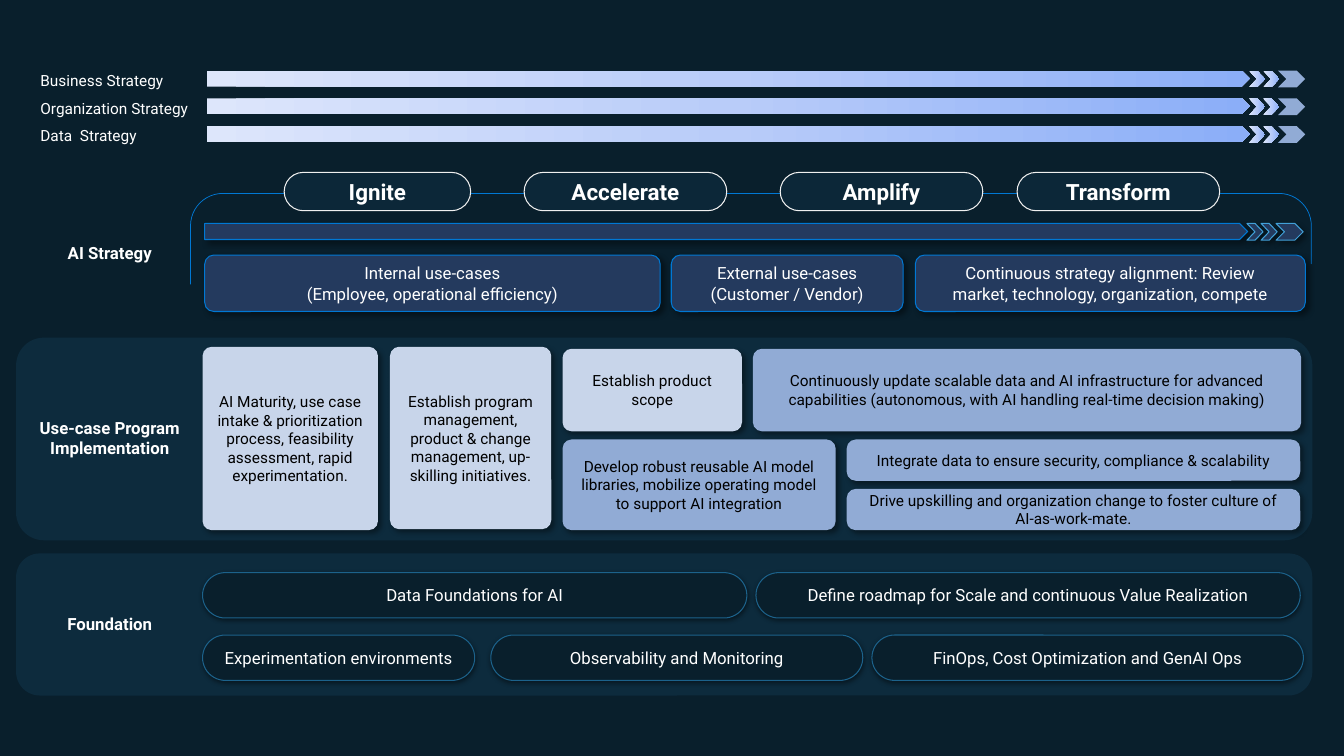
"""Build the AI journey roadmap slide."""
import copy

import pptx
import pptx.dml.color
import pptx.enum.shapes
import pptx.enum.text
import pptx.oxml
import pptx.oxml.ns
import pptx.util

Pt = pptx.util.Pt
RGB = pptx.dml.color.RGBColor
SHAPE = pptx.enum.shapes.MSO_SHAPE
ALIGN = pptx.enum.text.PP_ALIGN
qn = pptx.oxml.ns.qn

NIGHT = RGB(0x09, 0x1F, 0x2C)
PANEL = RGB(0x0D, 0x2B, 0x3D)
STAGE = RGB(0x0C, 0x27, 0x38)
NAVY = RGB(0x24, 0x3A, 0x5E)
AZURE = RGB(0x00, 0x78, 0xD4)
SKY = RGB(0x41, 0xA0, 0xD8)
TEAL = RGB(0x1C, 0x62, 0x8B)
PALE = RGB(0xC8, 0xD5, 0xEA)
STEEL = RGB(0x91, 0xAB, 0xD5)
MIST = RGB(0xF0, 0xF0, 0xF0)
WHITE = RGB(0xFF, 0xFF, 0xFF)
BLACK = RGB(0x00, 0x00, 0x00)
FADE = (RGB(0xDD, 0xE6, 0xFB), RGB(0xB9, 0xCC, 0xF9), RGB(0x8B, 0xAE, 0xF8))

CARD_SHADOW = (40, 4, 3, 45)
PILL_SHADOW = (45, 3.5, 1.1, 90)
CARD_RADIUS = 6.5
FLOW_WIDTH = 745

STRATEGIES = ("Business Strategy", "Organization Strategy", "Data  Strategy")
STAGES = (
    (203, 133.2, "Ignite"),
    (374.4, 144.7, "Accelerate"),
    (557.3, 144.7, "Amplify"),
    (726.5, 144.7, "Transform"),
)
USE_CASES = (
    (146.2, 325.4, "Internal use-cases\n(Employee, operational efficiency)"),
    (479.5, 165.6, "External use-cases\n(Customer / Vendor)"),
    (653.8, 278.6, "Continuous strategy alignment: Review market, technology, organization, compete"),
)
PROGRAM = (
    (144.7, 247.7, 125.3, 131, PALE,
     "AI Maturity, use case intake & prioritization process, feasibility assessment, "
     "rapid experimentation."),
    (278.6, 247.7, 115.2, 130.3, PALE,
     "Establish program management, product & change management, up-skilling initiatives."),
    (401.8, 249.1, 128.2, 59, PALE, "Establish product scope"),
    (401.8, 313.9, 195.1, 64.8, STEEL,
     "Develop robust reusable AI model libraries, mobilize operating model to support "
     "AI integration"),
    (537.8, 249.1, 391.7, 59, STEEL,
     "Continuously update scalable data and AI infrastructure for advanced capabilities "
     "(autonomous, with AI handling real-time decision making)"),
    (604.8, 313.9, 324, 29.5, STEEL,
     "Integrate data to ensure security, compliance & scalability"),
    (604.8, 349.2, 324, 29.5, STEEL,
     "Drive upskilling and organization change to foster culture of AI-as-work-mate."),
)
FOUNDATION = (
    (144.7, 409, 388.8, "Data Foundations for AI"),
    (540, 409, 388.8, "Define roadmap for Scale and continuous Value Realization"),
    (144.7, 453.6, 194.4, "Experimentation environments"),
    (350.6, 453.6, 265.7, "Observability and Monitoring"),
    (622.8, 453.6, 308.2, "FinOps, Cost Optimization and GenAI Ops"),
)
SECTIONS = (
    (158.4, 43.9, "AI Strategy"),
    (290.9, 43.9, "Use-case Program Implementation"),
    (431.3, 28.8, "Foundation"),
)


def write(sp, text, size=12, color=WHITE, bold=False, align=ALIGN.CENTER, inset=0):
    """Fill a shape with vertically centred text, one paragraph per line."""
    tf = sp.text_frame
    tf.word_wrap = True
    tf.vertical_anchor = pptx.enum.text.MSO_ANCHOR.MIDDLE
    tf.margin_left = tf.margin_right = Pt(inset)
    tf.margin_top = tf.margin_bottom = 0
    for i, line in enumerate(text.split("\n")):
        p = tf.add_paragraph() if i else tf.paragraphs[0]
        p.alignment = align
        r = p.add_run()
        r.text = line
        r.font.name = "Roboto"
        r.font.size = Pt(size)
        r.font.bold = bold
        r.font.color.rgb = color


def cast_shadow(sp, alpha, blur, distance, angle):
    """Give a shape a soft black outer shadow."""
    effects = sp._element.spPr.find(qn("a:effectLst"))
    effects.append(pptx.oxml.parse_xml(
        f'<a:outerShdw {pptx.oxml.ns.nsdecls("a")} blurRad="{Pt(blur)}" dist="{Pt(distance)}" '
        f'dir="{angle * 60000}" algn="ctr" rotWithShape="0"><a:srgbClr val="000000">'
        f'<a:alpha val="{alpha * 1000}"/></a:srgbClr></a:outerShdw>'))


def fade(sp):
    """Fill a shape with the left-to-right strategy gradient."""
    sp.fill.gradient()
    sp.fill.gradient_angle = 0
    stops = sp._element.spPr.find(".//" + qn("a:gsLst"))
    stops.insert(1, copy.deepcopy(stops[0]))
    for i, stop in enumerate(sp.fill.gradient_stops):
        stop.position = i / 2
        stop.color.rgb = FADE[i]


def add_figure(s, kind, x, y, w, h, fill=None, line=None, weight=0.75, shadow=None):
    """Add a preset shape; without a solid fill it takes the gradient."""
    sp = s.shapes.add_shape(kind, Pt(x), Pt(y), Pt(w), Pt(h))
    sp.shadow.inherit = False
    if fill is None:
        fade(sp)
    else:
        sp.fill.solid()
        sp.fill.fore_color.rgb = fill
    if line is None:
        sp.line.fill.background()
    else:
        sp.line.color.rgb = line
        sp.line.width = Pt(weight)
    if shadow:
        cast_shadow(sp, *shadow)
    return sp


def add_rounded(s, x, y, w, h, radius, fill, **style):
    """Add a rounded rectangle with a corner radius in points."""
    sp = add_figure(s, SHAPE.ROUNDED_RECTANGLE, x, y, w, h, fill, **style)
    sp.adjustments[0] = radius / min(w, h)
    return sp


def add_label(s, x, y, w, h, text, **style):
    """Add a text box."""
    write(s.shapes.add_textbox(Pt(x), Pt(y), Pt(w), Pt(h)), text, **style)


def add_flow(s, x, y, fill=None, tip=None, line=None, tip_line=None, shadow=None):
    """Add a long bar that ends in two small chevrons and a wide one."""
    add_figure(s, SHAPE.PENTAGON, x, y, FLOW_WIDTH, 11.5, fill, line, shadow=shadow)
    for offset, w, color in ((744.5, 11.5, fill), (754.6, 11.5, fill), (765.3, 19.4, tip)):
        add_figure(s, SHAPE.CHEVRON, x + offset, y, w, 12, color, tip_line, shadow=shadow)


def add_bracket(s):
    """Add the thin rounded bracket that spans the stages."""
    sp = add_figure(s, SHAPE.U_TURN_ARROW, 136.1, 138.2, 800.6, 64.8, NAVY, AZURE, 0.5)
    for i, value in enumerate((0, 0, 0, 0.356, 0.776)):
        sp.adjustments[i] = value


def main():
    """Compose and save the slide."""
    prs = pptx.Presentation()
    prs.slide_width, prs.slide_height = Pt(960), Pt(540)
    s = prs.slides.add_slide(prs.slide_layouts[6])
    s.background.fill.solid()
    s.background.fill.fore_color.rgb = NIGHT

    for i, text in enumerate(STRATEGIES):
        y = 50.4 + 19.8 * i
        add_label(s, 28.8, y - 1, 118, 16, text, size=11, align=ALIGN.LEFT)
        add_flow(s, 147.6, y, tip=STEEL)

    add_bracket(s)
    for x, w, text in STAGES:
        sp = add_rounded(s, x, 123.1, w, 27.4, 13.7, STAGE, line=MIST)
        write(sp, text, size=16, bold=True)
    add_flow(s, 146.2, 159.6, NAVY, NAVY, AZURE, SKY, CARD_SHADOW)
    for x, w, text in USE_CASES:
        sp = add_rounded(s, x, 182.2, w, 40.3, CARD_RADIUS, NAVY, line=AZURE, shadow=CARD_SHADOW)
        write(sp, text, inset=14.4)

    add_rounded(s, 11.5, 241.2, 925.9, 144.7, 19.8, PANEL)
    for x, y, w, h, fill, text in PROGRAM:
        sp = add_rounded(s, x, y, w, h, CARD_RADIUS, fill, shadow=CARD_SHADOW)
        write(sp, text, size=11, color=BLACK, inset=7.2)

    add_rounded(s, 11.5, 395.3, 925.9, 101.5, 16.9, PANEL)
    for x, y, w, text in FOUNDATION:
        sp = add_rounded(s, x, y, w, 32.4, 16.2, NIGHT, line=TEAL, shadow=PILL_SHADOW)
        write(sp, text)

    for y, h, text in SECTIONS:
        add_label(s, 12.2, y, 132.5, h, text, bold=True, inset=14.4)
    prs.save("out.pptx")


if __name__ == "__main__":
    main()
